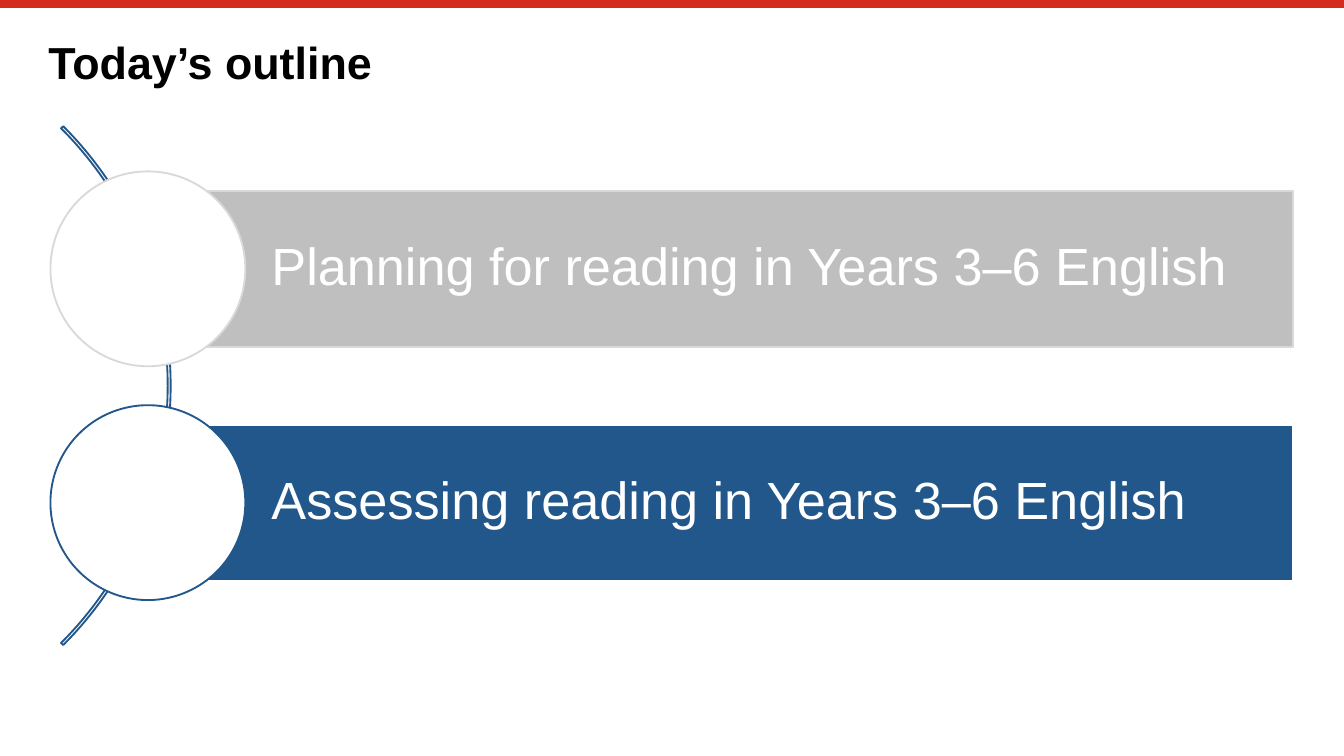
from dataclasses import dataclass

import pptx
import pptx.dml.color
import pptx.enum.shapes
import pptx.enum.text
import pptx.oxml.ns
import pptx.util
from lxml import etree

Inches = pptx.util.Inches
Pt = pptx.util.Pt
MSO_SHAPE = pptx.enum.shapes.MSO_SHAPE
MSO_ANCHOR = pptx.enum.text.MSO_ANCHOR


@dataclass(frozen=True)
class Theme:
    font: str = "Arial"
    title_size: float = 24
    item_size: float = 28
    line_width: float = 1
    stripe_width: float = 4.2
    line_spacing: float = 0.9
    red: str = "D52B1E"
    blue: str = "21578A"
    gray: str = "BFBFBF"
    pale_gray: str = "D9D9D9"
    white: str = "FFFFFF"
    black: str = "000000"


@dataclass(frozen=True)
class OutlineItem:
    text: str
    bar_fill: str
    bar_line: str
    circle_line: str


THEME = Theme()
ITEMS = [
    OutlineItem("Planning for reading in Years 3–6 English",
                THEME.gray, THEME.pale_gray, THEME.pale_gray),
    OutlineItem("Assessing reading in Years 3–6 English",
                THEME.blue, THEME.white, THEME.blue),
]

# Geometry in inches
SLIDE_W = 10
SLIDE_H = SLIDE_W * 9 / 16
FIRST_CENTER, PITCH = 2.0, 1.74
BAR_LEFT, BAR_W, BAR_H = 1.1, 8.52, 1.16
CIRCLE_D = 1.45
ARC_LEFT, ARC_TOP, ARC_D = -4.19, 0.14, 5.46


def rgb(color: str) -> pptx.dml.color.RGBColor:
    return pptx.dml.color.RGBColor.from_string(color)


def add_shape(s, kind, left: float, top: float, width: float, height: float,
              fill: str | None, line: str):
    sp = s.shapes.add_shape(kind, Inches(left), Inches(top),
                            Inches(width), Inches(height))
    sp.shadow.inherit = False
    if fill is None:
        sp.fill.background()
    else:
        sp.fill.solid()
        sp.fill.fore_color.rgb = rgb(fill)
    sp.line.color.rgb = rgb(line)
    sp.line.width = Pt(THEME.line_width)
    return sp


def write_text(tf, text: str, size: float, color: str, bold: bool, anchor,
               insets: tuple[float, float, float, float]) -> None:
    tf.word_wrap = True
    tf.auto_size = pptx.enum.text.MSO_AUTO_SIZE.NONE
    tf.vertical_anchor = anchor
    tf.margin_left, tf.margin_top, tf.margin_right, tf.margin_bottom = map(Inches, insets)
    p = tf.paragraphs[0]
    p.alignment = pptx.enum.text.PP_ALIGN.LEFT
    p.line_spacing = THEME.line_spacing
    p.space_before = Pt(0)
    r = p.add_run()
    r.text = text
    r.font.name = THEME.font
    r.font.size = Pt(size)
    r.font.bold = bold
    r.font.color.rgb = rgb(color)


def add_stripe(s) -> None:
    line = s.shapes.add_connector(pptx.enum.shapes.MSO_CONNECTOR.STRAIGHT,
                                  Inches(0), Inches(0.03),
                                  Inches(SLIDE_W), Inches(0.03))
    line.line.color.rgb = rgb(THEME.red)
    line.line.width = Pt(THEME.stripe_width)
    etree.SubElement(line._element.spPr, pptx.oxml.ns.qn("a:effectLst"))


def add_title(s, text: str) -> None:
    title = s.shapes.title
    title.left, title.top = Inches(0.36), Inches(0.3)
    title.width, title.height = Inches(9.29), Inches(0.39)
    write_text(title.text_frame, text, THEME.title_size, THEME.black, True,
               MSO_ANCHOR.TOP, (0, 0, 0, 0))


def add_arc(s) -> None:
    arc = add_shape(s, MSO_SHAPE.BLOCK_ARC, ARC_LEFT, ARC_TOP, ARC_D, ARC_D,
                    None, THEME.blue)
    # Angles run from 315 to 45 degrees; the last value is the band thickness
    for i, value in enumerate((189, 27, 0.004)):
        arc.adjustments[i] = value


def add_item(s, item: OutlineItem, center: float) -> None:
    bar = add_shape(s, MSO_SHAPE.RECTANGLE, BAR_LEFT, center - BAR_H / 2,
                    BAR_W, BAR_H, item.bar_fill, item.bar_line)
    write_text(bar.text_frame, item.text, THEME.item_size, THEME.white, False,
               MSO_ANCHOR.MIDDLE, (0.92, 0.08, 0.08, 0.08))
    add_shape(s, MSO_SHAPE.OVAL, BAR_LEFT - CIRCLE_D / 2, center - CIRCLE_D / 2,
              CIRCLE_D, CIRCLE_D, THEME.white, item.circle_line)


def main() -> None:
    prs = pptx.Presentation()
    prs.slide_width, prs.slide_height = Inches(SLIDE_W), Inches(SLIDE_H)
    s = prs.slides.add_slide(prs.slide_layouts[5])

    # Header
    add_stripe(s)
    add_title(s, "Today’s outline")

    # Outline: arc behind, then one bar and circle per item
    add_arc(s)
    for i, item in enumerate(ITEMS):
        add_item(s, item, FIRST_CENTER + i * PITCH)

    prs.save("out.pptx")


if __name__ == "__main__":
    main()
